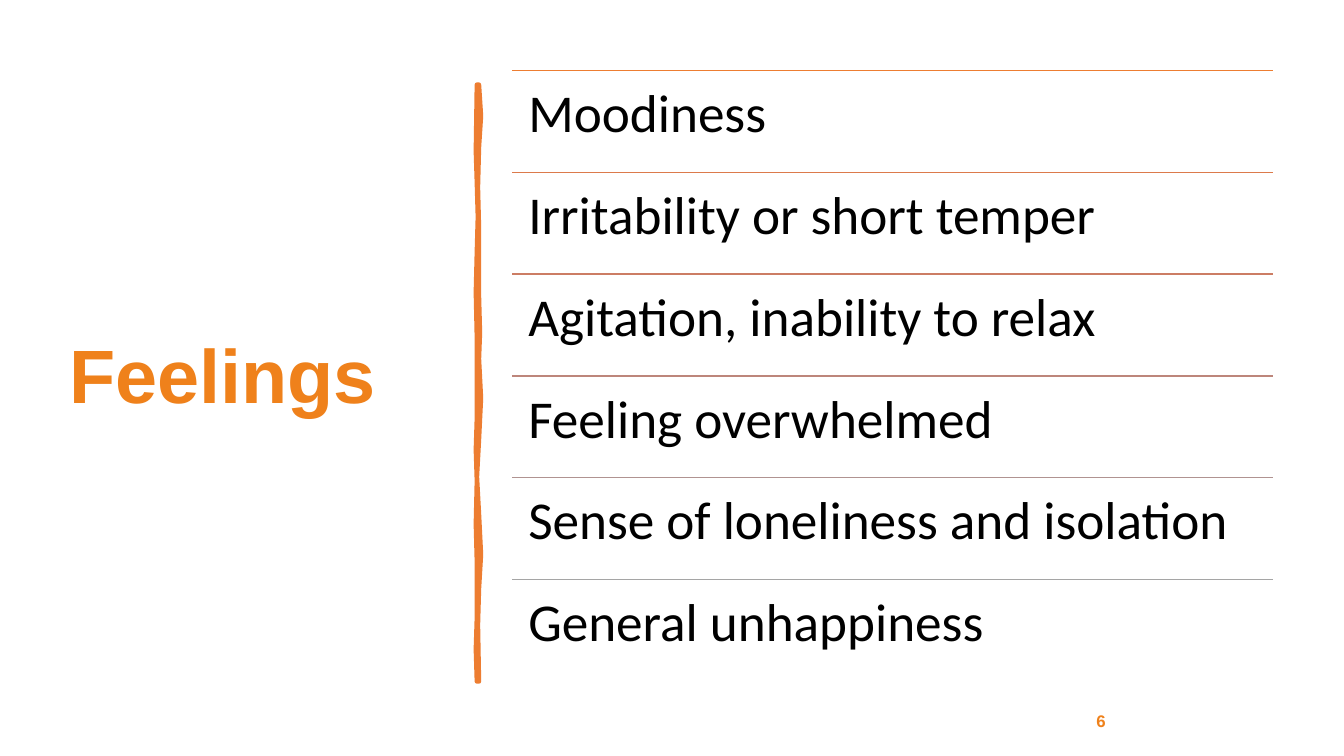
from lxml import etree
from pptx import Presentation
from pptx.dml.color import RGBColor
from pptx.enum import text
from pptx.oxml.ns import qn
from pptx.util import Inches, Pt

ORANGE = "EF811B"
ACCENT = "ED7D31"


def color(code):
    return RGBColor.from_string(code)


def write(shape, words, font, size, code, bold=False, pad=0):
    """Fill a shape with one run of text and return its paragraph."""
    frame = shape.text_frame
    frame.word_wrap = True
    frame.auto_size = text.MSO_AUTO_SIZE.NONE
    frame.margin_left = frame.margin_right = Inches(pad)
    frame.margin_top = frame.margin_bottom = Inches(pad)
    para = frame.paragraphs[0]
    run = para.add_run()
    run.text = words
    run.font.name = font
    run.font.size = Pt(size)
    run.font.bold = bold
    run.font.color.rgb = color(code)
    return para


deck = Presentation()
deck.slide_width = Inches(13.33)
deck.slide_height = Inches(7.5)
slide = deck.slides.add_slide(deck.slide_layouts[5])
slide.background.fill.solid()
slide.background.fill.fore_color.rgb = color("FFFFFF")
shapes = slide.shapes

# Title
title = shapes.title
title.left, title.top = Inches(0.69), Inches(0.7)
title.width, title.height = Inches(3.74), Inches(6.11)
para = write(title, "Feelings", "Arial", 54, ORANGE, bold=True)
para.alignment = text.PP_ALIGN.LEFT
para.line_spacing = 0.9
title.text_frame.vertical_anchor = text.MSO_ANCHOR.MIDDLE

# Hand-drawn divider: down the right edge, then up the left
right = [(4.75, 0.84), (4.77, 1.15), (4.75, 1.46), (4.74, 1.86), (4.75, 2.26),
         (4.75, 2.94), (4.76, 3.3), (4.75, 3.56), (4.77, 3.95), (4.75, 4.36),
         (4.73, 4.73), (4.75, 5.1), (4.77, 5.5), (4.75, 5.84), (4.74, 6.2),
         (4.75, 6.76)]
left = [(4.73, 6.76), (4.72, 6.44), (4.73, 6.13), (4.73, 5.57), (4.72, 5.2),
        (4.73, 4.77), (4.72, 4.46), (4.73, 4.15), (4.73, 3.35), (4.72, 2.9),
        (4.73, 2.5), (4.74, 2.15), (4.73, 1.81), (4.72, 1.5), (4.73, 0.84)]
edge = [(Inches(x), Inches(y)) for x, y in right + left]
pen = shapes.build_freeform(*edge[0])
pen.add_line_segments(edge[1:], close=True)
divider = pen.convert_to_shape()
divider.shadow.inherit = False
divider.fill.solid()
divider.fill.fore_color.rgb = color(ACCENT)
divider.line.color.rgb = color(ACCENT)
divider.line.width = Pt(3.25)

# Slide number
number = shapes.add_textbox(Inches(9.42), Inches(6.95), Inches(3), Inches(0.4))
para = write(number, "6", "Arial", 12, ORANGE, bold=True)
para.alignment = text.PP_ALIGN.CENTER
para.space_after = Pt(6)
number.text_frame.vertical_anchor = text.MSO_ANCHOR.MIDDLE

# Ruled list
rows = [
    ("Moodiness", ACCENT),
    ("Irritability or short temper", "DC7A4B"),
    ("Agitation, inability to relax", "CC7D64"),
    ("Feeling overwhelmed", "BD867B"),
    ("Sense of loneliness and isolation", "B09391"),
    ("General unhappiness", "A5A5A5"),
]
start, width, step = Inches(5.08), Inches(7.55), Inches(1.01)
for i, (words, code) in enumerate(rows):
    top = Inches(0.7) + i * step
    rule = shapes.add_connector(1, start, top, start + width, top)
    rule.line.color.rgb = color(code)
    rule.line.width = Pt(1)
    etree.SubElement(rule._element.spPr, qn("a:effectLst"))
    box = shapes.add_textbox(start, top, width, step)
    para = write(box, words, "Calibri", 38, "000000", pad=0.16)
    para.line_spacing = 0.9

deck.save("out.pptx")
